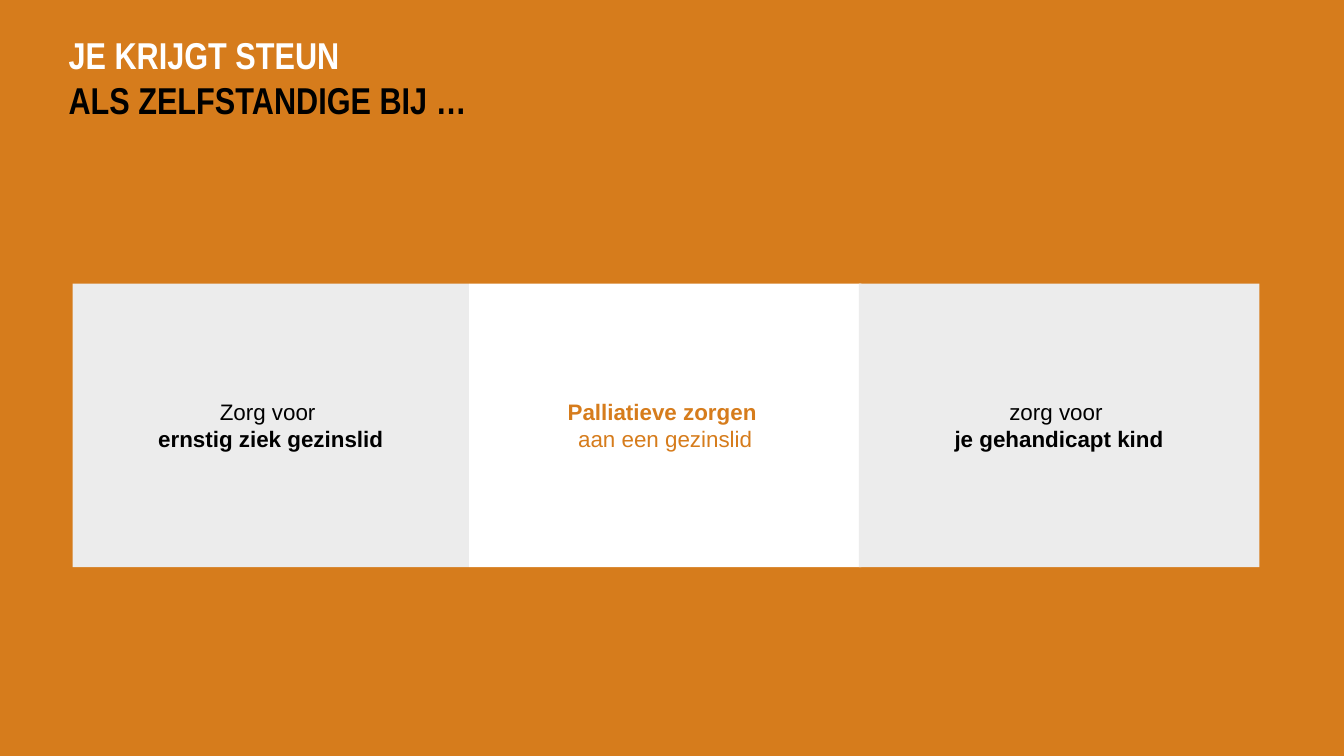
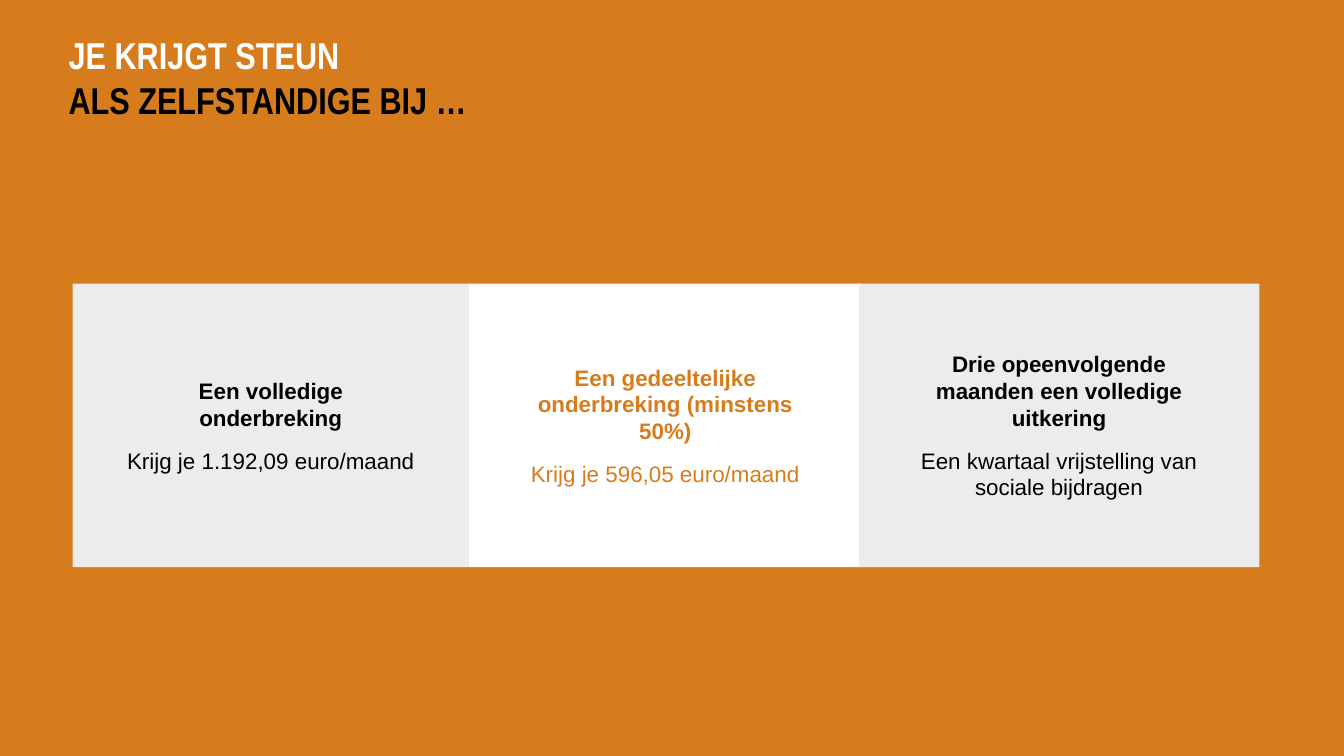
from pptx import Presentation
from pptx.dml.color import RGBColor
from pptx.enum.shapes import MSO_SHAPE
from pptx.enum.text import MSO_ANCHOR as ANCHOR, MSO_AUTO_SIZE as AUTO, PP_ALIGN as ALIGN
from pptx.util import Inches, Pt

ORANGE, WHITE, BLACK, GREY = "D67C1C", "FFFFFF", "000000", "ECECEC"
TITLE_BOX = (0.51, 0.3, 4.43, 0.61)
TITLE_LINES = [("JE KRIJGT STEUN ", WHITE), ("ALS ZELFSTANDIGE BIJ …", BLACK)]
PANELS_BOX = (0.54, 2.11, 8.83, 2.11)
# Per panel: offset, width, fill, text colour
PANELS = [(0, 2.95, GREY, BLACK), (2.95, 2.92, WHITE, ORANGE), (5.85, 2.98, GREY, BLACK)]

# Per slide and panel: paragraphs, each a list of (line, bold)
CARE_REASONS = [
    [[("Zorg voor ", False), ("ernstig ziek gezinslid", True)]],
    [[("Palliatieve zorgen ", True), ("aan een gezinslid", False)]],
    [[("zorg voor ", False), ("je gehandicapt kind", True)]],
]
BENEFITS = [
    [[("Een volledige onderbreking", True)],
     [("Krijg je 1.192,09 euro/maand", False)]],
    [[("Een gedeeltelijke onderbreking (minstens 50%)", True)],
     [("Krijg je 596,05 euro/maand", False)]],
    [[("Drie opeenvolgende maanden een volledige uitkering", True)],
     [("Een kwartaal vrijstelling van sociale bijdragen", False)]],
]


def rgb(value):
    return RGBColor.from_string(value)


def set_frame(tf, margin, anchor):
    tf.margin_left = tf.margin_top = tf.margin_right = tf.margin_bottom = Inches(margin)
    tf.vertical_anchor = anchor
    tf.auto_size = AUTO.NONE
    tf.word_wrap = True


def add_lines(p, lines):
    """Add one run per line, with line breaks between, and yield each run with its style."""
    for i, (text, style) in enumerate(lines):
        if i:
            p.add_line_break()
        r = p.add_run()
        r.text = text
        yield r, style


def add_title(s, box):
    title = s.shapes.title
    title.left, title.top, title.width, title.height = map(Inches, box)
    set_frame(title.text_frame, 0, ANCHOR.BOTTOM)
    p = title.text_frame.paragraphs[0]
    p.alignment = ALIGN.LEFT
    p.font.name, p.font.size, p.font.bold = "Arial Narrow", Pt(20), True
    for r, color in add_lines(p, TITLE_LINES):
        r.font.color.rgb = rgb(color)


def fill_panel(tf, paragraphs, color):
    set_frame(tf, 0.39, ANCHOR.MIDDLE)
    for i, lines in enumerate(paragraphs):
        p = tf.add_paragraph() if i else tf.paragraphs[0]
        p.alignment, p.space_after = ALIGN.CENTER, Pt(6)
        if i:
            p.space_before = Pt(2.4)
        p.font.name, p.font.size, p.font.color.rgb = "Arial", Pt(12), rgb(color)
        for r, bold in add_lines(p, lines):
            r.font.bold = bold


def add_panels(s, box, texts):
    left, top, _, height = box
    group = s.shapes.add_group_shape()
    for (offset, width, fill, color), paragraphs in zip(PANELS, texts):
        sp = group.shapes.add_shape(MSO_SHAPE.RECTANGLE, Inches(left + offset), Inches(top),
                                    Inches(width), Inches(height))
        sp.shadow.inherit = False
        sp.fill.solid()
        sp.fill.fore_color.rgb = rgb(fill)
        sp.line.fill.background()
        fill_panel(sp.text_frame, paragraphs, color)


def add_support_slide(prs, texts):
    s = prs.slides.add_slide(prs.slide_layouts[5])
    add_title(s, TITLE_BOX)
    add_panels(s, PANELS_BOX, texts)


def main():
    prs = Presentation()
    # Widescreen, 16:9
    prs.slide_width = Inches(10)
    prs.slide_height = prs.slide_width * 9 // 16
    # Shared background
    background = prs.slide_master.background.fill
    background.solid()
    background.fore_color.rgb = rgb(ORANGE)
    for texts in (CARE_REASONS, BENEFITS):
        add_support_slide(prs, texts)
    prs.save("out.pptx")


if __name__ == "__main__":
    main()
